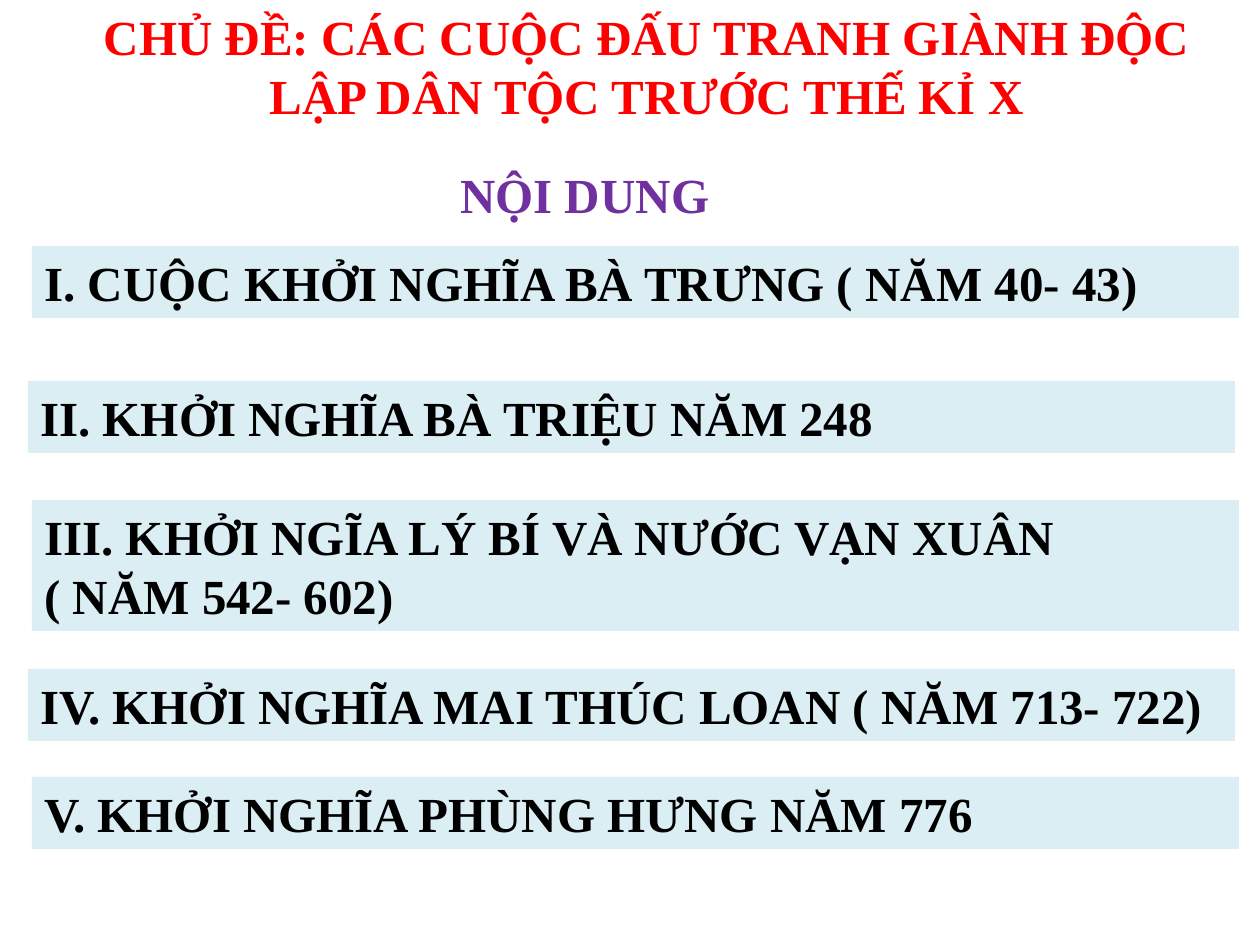
from pptx import Presentation
from pptx.dml.color import RGBColor
from pptx.enum.shapes import MSO_SHAPE
from pptx.enum.text import MSO_ANCHOR, MSO_AUTO_SIZE, PP_ALIGN
from pptx.util import Pt

RECTANGLE = MSO_SHAPE.RECTANGLE
TOP = MSO_ANCHOR.TOP
GROW = MSO_AUTO_SIZE.SHAPE_TO_FIT_TEXT
LEFT, CENTER = PP_ALIGN.LEFT, PP_ALIGN.CENTER
PX = 914400 // 126
FONT = {"name": "Times New Roman", "size": Pt(28), "bold": True}
FRAME = {"word_wrap": True, "vertical_anchor": TOP, "auto_size": GROW}


def color(value):
    return RGBColor.from_string(value)


def write(shape, text, ink, alignment):
    frame = shape.text_frame
    frame.text = text
    for name, value in FRAME.items():
        setattr(frame, name, value)
    for paragraph in frame.paragraphs:
        paragraph.alignment = alignment
        font = paragraph.runs[0].font
        for name, value in FONT.items():
            setattr(font, name, value)
        font.color.rgb = color(ink)


deck = Presentation()
deck.slide_width, deck.slide_height = 1260 * PX, 945 * PX
slide = deck.slides.add_slide(deck.slide_layouts[5])

topic = slide.shapes.title
for name, value in {"left": 53, "top": 0, "width": 1187, "height": 131}.items():
    setattr(topic, name, value * PX)
write(topic, "CHỦ ĐỀ: CÁC CUỘC ĐẤU TRANH GIÀNH ĐỘC LẬP DÂN TỘC TRƯỚC THẾ KỈ X", "FF0000", CENTER)

contents = slide.shapes.add_textbox(448 * PX, 158 * PX, 315 * PX, 72 * PX)
write(contents, "NỘI DUNG", "7030A0", LEFT)

uprisings = [
    (32, 246, 72, "I. CUỘC KHỞI NGHĨA BÀ TRƯNG ( NĂM 40- 43)"),
    (28, 381, 72, "II. KHỞI NGHĨA BÀ TRIỆU NĂM 248"),
    (32, 500, 131, "III. KHỞI NGĨA LÝ BÍ VÀ NƯỚC VẠN XUÂN\n( NĂM 542- 602)"),
    (28, 669, 72, "IV. KHỞI NGHĨA MAI THÚC LOAN ( NĂM 713- 722)"),
    (32, 777, 72, "V. KHỞI NGHĨA PHÙNG HƯNG NĂM 776"),
]
for left, top, height, text in uprisings:
    uprising = slide.shapes.add_shape(RECTANGLE, left * PX, top * PX, 1207 * PX, height * PX)
    uprising.shadow.inherit = False
    uprising.fill.solid()
    uprising.fill.fore_color.rgb = color("DBEEF4")
    uprising.line.fill.background()
    write(uprising, text, "000000", LEFT)

deck.save("out.pptx")
